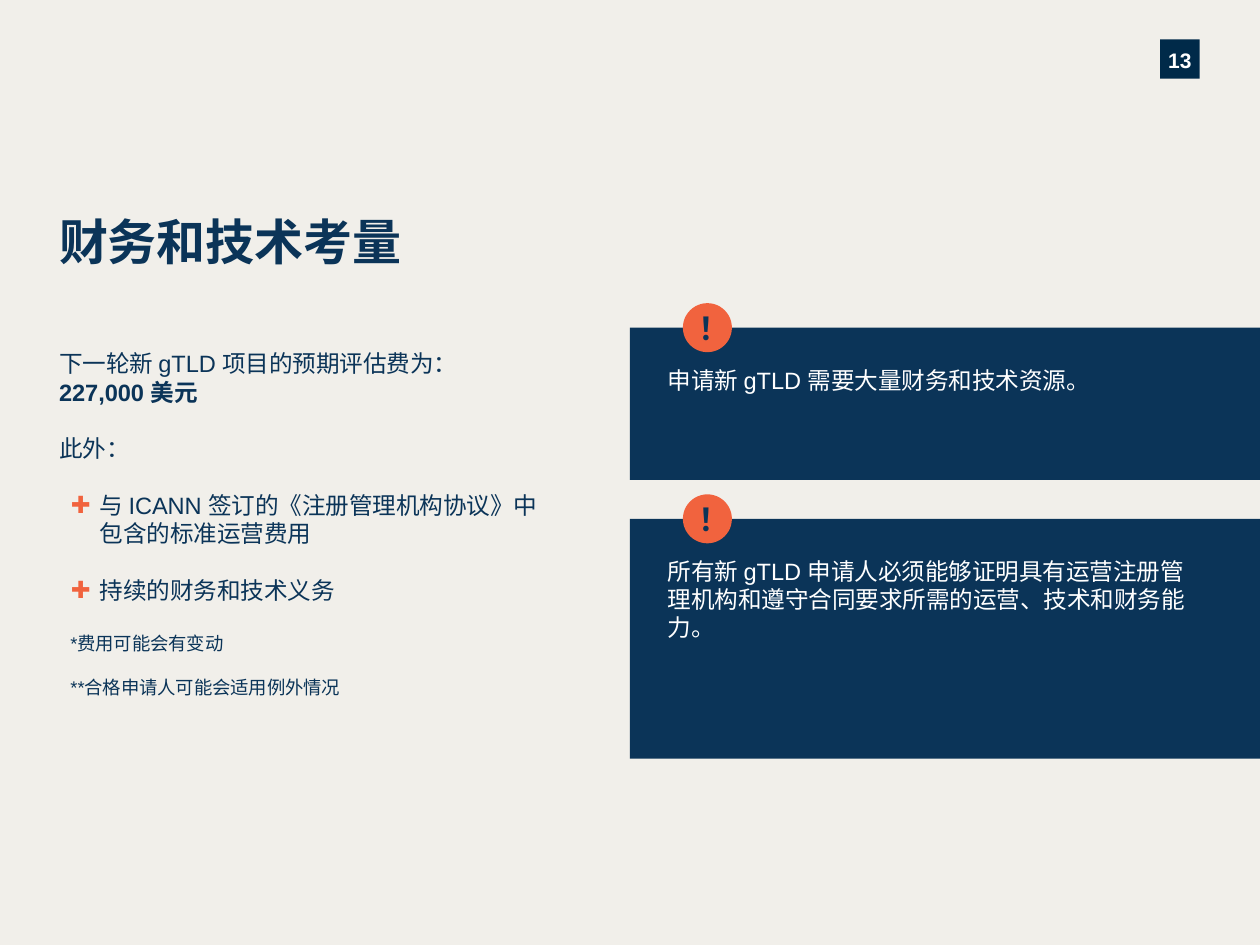
import dataclasses

import pptx
import pptx.dml.color
import pptx.enum.lang
import pptx.enum.shapes
import pptx.enum.text
import pptx.oxml
import pptx.util

Pt = pptx.util.Pt
Shape = pptx.enum.shapes.MSO_SHAPE
Align = pptx.enum.text.PP_ALIGN
Anchor = pptx.enum.text.MSO_ANCHOR


@dataclasses.dataclass(frozen=True)
class Theme:
    font: str = "Arial"
    paper: str = "F1EFEA"
    navy: str = "0B3458"
    dark: str = "002A49"
    coral: str = "F1633E"
    white: str = "FFFFFF"
    title: float = 28
    mark: float = 18
    body: float = 13.5
    page: float = 12
    note: float = 10.5


class Deck:
    def __init__(self, theme):
        self.theme = theme
        self.file = pptx.Presentation()
        self.file.slide_width, self.file.slide_height = Pt(720), Pt(540)
        self.slide = self.file.slides.add_slide(self.file.slide_layouts[6])
        self.paint(self.slide.background.fill, theme.paper)

    def paint(self, fill, color):
        fill.solid()
        fill.fore_color.rgb = pptx.dml.color.RGBColor.from_string(color)

    def frame(self, shape, inset=(0, 0, 0, 0), anchor=Anchor.TOP):
        """Set up the text area; insets run left, top, right, bottom."""
        area = shape.text_frame
        area.word_wrap = True
        area.vertical_anchor = anchor
        (area.margin_left, area.margin_top,
         area.margin_right, area.margin_bottom) = map(Pt, inset)
        return area

    def run(self, para, text, size, color, bold=False):
        run = para.add_run()
        run.text = text
        font = run.font
        font.name, font.size, font.bold = self.theme.font, Pt(size), bold
        font.language_id = pptx.enum.lang.MSO_LANGUAGE_ID.SIMPLIFIED_CHINESE
        self.paint(font.fill, color)

    def text(self, left, top, width, height):
        return self.frame(self.slide.shapes.add_textbox(
            Pt(left), Pt(top), Pt(width), Pt(height)))

    def shape(self, kind, at, fill, inset, anchor, align):
        """Draw a filled shape and return its first paragraph."""
        shape = self.slide.shapes.add_shape(kind, *map(Pt, at))
        shape.shadow.inherit = False
        self.paint(shape.fill, fill)
        shape.line.fill.background()
        para = self.frame(shape, inset, anchor).paragraphs[0]
        para.alignment = align
        return para

    def page(self, number):
        para = self.shape(Shape.RECTANGLE, (663, 22.5, 22.5, 22.5),
                          self.theme.dark, (0, 0, 0, 0),
                          Anchor.MIDDLE, Align.CENTER)
        para.line_spacing = 1.08
        self.run(para, number, self.theme.page, self.theme.white, True)

    def panel(self, top, height, text):
        """Draw a panel with a warning badge centred on its top edge."""
        theme, size = self.theme, 28
        para = self.shape(Shape.RECTANGLE, (360, top, 360, height), theme.navy,
                          (21.6, 21.6, 36, 16), Anchor.TOP, Align.LEFT)
        self.run(para, text, theme.body, theme.white)
        para = self.shape(Shape.OVAL, (390.25, top - size / 2, size, size),
                          theme.coral, (5, 3, 5, 3),
                          Anchor.MIDDLE, Align.CENTER)
        self.run(para, "！", theme.mark, theme.navy, True)

    def indent(self, para, left, first=0, bullet=None):
        props = para._p.get_or_add_pPr()
        props.set("marL", str(Pt(left)))
        props.set("indent", str(Pt(first)))
        if bullet:
            space = pptx.oxml.ns.nsdecls("a")
            for body in (
                f'<a:buClr {space}><a:srgbClr val="{self.theme.coral}"/></a:buClr>',
                f'<a:buFont {space} typeface="{self.theme.font}"/>',
                f'<a:buChar {space} char="{bullet}"/>',
            ):
                props.append(pptx.oxml.parse_xml(body))


def main():
    theme = Theme()
    deck = Deck(theme)
    deck.page("13")

    title = deck.text(33.75, 121, 518, 59).paragraphs[0]
    deck.run(title, "财务和技术考量", theme.title, theme.navy, True)

    area = deck.text(33.75, 199.5, 276, 230)
    intro = area.paragraphs[0]
    deck.run(intro, "下一轮新 gTLD 项目的预期评估费为：", theme.body, theme.navy)
    deck.run(intro, "227,000 美元", theme.body, theme.navy, True)

    plain, point, note = (0,), (23.25, -16.5, "✚"), (6.5,)
    rows = [
        ("此外：", plain, theme.body, 16.2),
        ("与 ICANN 签订的《注册管理机构协议》中包含的标准运营费用",
         point, theme.body, 16.2),
        ("持续的财务和技术义务", point, theme.body, 16.2),
        ("*费用可能会有变动", note, theme.note, 16.2),
        ("**合格申请人可能会适用例外情况", note, theme.note, 12.6),
    ]
    for words, layout, size, gap in rows:
        para = area.add_paragraph()
        deck.indent(para, *layout)
        para.space_before = Pt(gap)
        deck.run(para, words, size, theme.navy)

    deck.panel(187.25, 87, "申请新 gTLD 需要大量财务和技术资源。")
    deck.panel(296.5, 137, "所有新 gTLD 申请人必须能够证明具有运营注册管理机构"
                           "和遵守合同要求所需的运营、技术和财务能力。")
    deck.file.save("out.pptx")


if __name__ == "__main__":
    main()
